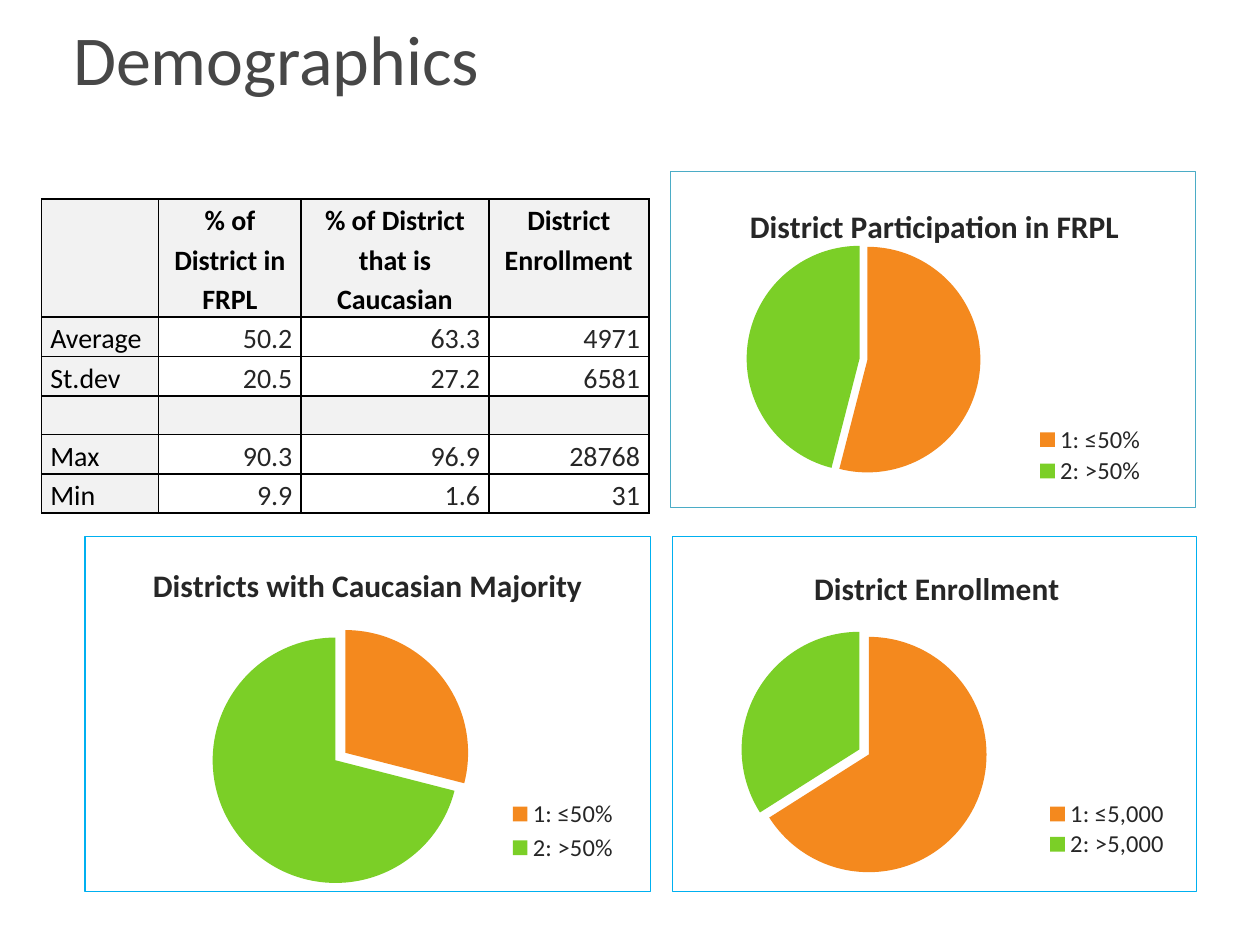
from lxml import etree
from pptx import Presentation
from pptx.chart.data import CategoryChartData
from pptx.dml.color import RGBColor
from pptx.enum.chart import XL_CHART_TYPE, XL_LEGEND_POSITION
from pptx.enum.text import MSO_ANCHOR, PP_ALIGN
from pptx.oxml import parse_xml
from pptx.oxml.ns import nsdecls, qn
from pptx.util import Inches, Pt

PIE = XL_CHART_TYPE.PIE
LEGEND_RIGHT = XL_LEGEND_POSITION.RIGHT
MIDDLE, BOTTOM, TOP = MSO_ANCHOR.MIDDLE, MSO_ANCHOR.BOTTOM, MSO_ANCHOR.TOP
LEFT, CENTER, RIGHT = PP_ALIGN.LEFT, PP_ALIGN.CENTER, PP_ALIGN.RIGHT

FONT = "Calibri"
BLACK, INK, GRAY, SHADE, WHITE = "000000", "262626", "474747", "F2F2F2", "FFFFFF"
SLICES = ["F4891E", "7BCF27"]
GRID_COLUMNS, GRID_ROWS = 100, 75

TABLE_ROWS = [
    ["", "% of District in FRPL", "% of District that is Caucasian", "District Enrollment"],
    ["Average", "50.2", "63.3", "4971"],
    ["St.dev", "20.5", "27.2", "6581"],
    ["", "", "", ""],
    ["Max", "90.3", "96.9", "28768"],
    ["Min", "9.9", "1.6", "31"],
]
COLUMN_SPANS = [9.3, 11.3, 14.9, 12.7]
ROW_SPANS = [9.1, 2.9, 2.9, 1.7, 2.9, 2.9]

CHARTS = [
    dict(box=(53.2, 13.6, 41.7, 26.7), title="District Participation in FRPL",
         categories=["1: ≤50%", "2: >50%"], values=[54, 46], explosion=(13, 0, 7),
         border=("4BACC6", 0.5), title_at=(0.14, 0.08),
         plot_at=(0.13, 0.18, 0.49, 0.76), legend_at=(0.68, 0.75, 0.24, 0.19)),
    dict(box=(53.3, 42.5, 41.7, 28.3), title="District Enrollment",
         categories=["1: ≤5,000", "2: >5,000"], values=[66, 34], explosion=(9, 0, 9),
         border=("00B0F0", 0.75), title_at=(0.26, 0.07),
         plot_at=(0.13, 0.25, 0.49, 0.73), legend_at=(0.7, 0.74, 0.26, 0.17)),
    dict(box=(6.7, 42.5, 45, 28.3), title="Districts with Caucasian Majority",
         categories=["1: ≤50%", "2: >50%"], values=[29, 71], explosion=(10, 0, 10),
         border=("00B0F0", 0.75), title_at=(0.11, 0.06),
         plot_at=(0.22, 0.23, 0.48, 0.76), legend_at=(0.73, 0.73, 0.23, 0.2)),
]


def color(value):
    return RGBColor.from_string(value)


def grid_box(deck, left, top, width, height):
    column, row = deck.slide_width / GRID_COLUMNS, deck.slide_height / GRID_ROWS
    return [int(left * column), int(top * row), int(width * column), int(height * row)]


def write(frame, text, size=16, fill=INK, bold=False, align=LEFT, spacing=None):
    para = frame.paragraphs[0]
    para.alignment = align
    if spacing:
        para.line_spacing = spacing
    span = para.add_run()
    span.text = text
    span.font.name, span.font.size, span.font.bold = FONT, Pt(size), bold
    span.font.color.rgb = color(fill)


def add_title(slide, box, text):
    title = slide.shapes.title
    title.left, title.top, title.width, title.height = box
    title.text_frame.vertical_anchor = MIDDLE
    write(title.text_frame, text, size=40, fill=GRAY)


def add_borders(cell):
    properties = cell._tc.get_or_add_tcPr()
    for index, side in enumerate(["lnL", "lnR", "lnT", "lnB"]):
        properties.insert(index, parse_xml(
            f'<a:{side} {nsdecls("a")} w="12700"><a:solidFill>'
            f'<a:srgbClr val="{BLACK}"/></a:solidFill></a:{side}>'))


def add_statistics(slide, box):
    frame = slide.shapes.add_table(len(TABLE_ROWS), len(COLUMN_SPANS), *box)
    table = frame.table
    for column, share in zip(table.columns, COLUMN_SPANS):
        column.width = int(box[2] * share / sum(COLUMN_SPANS))
    for row, share in zip(table.rows, ROW_SPANS):
        row.height = int(box[3] * share / sum(ROW_SPANS))
    for row_index, texts in enumerate(TABLE_ROWS):
        header = row_index == 0
        for column_index, text in enumerate(texts):
            cell = table.cell(row_index, column_index)
            label = column_index == 0
            cell.margin_left = cell.margin_right = Inches(0.07)
            cell.margin_top = cell.margin_bottom = 0
            cell.vertical_anchor = TOP if header else BOTTOM
            cell.fill.solid()
            shaded = header or label or not text
            cell.fill.fore_color.rgb = color(SHADE if shaded else WHITE)
            add_borders(cell)
            if text:
                write(cell.text_frame, text, bold=header, spacing=1.15,
                      fill=BLACK if header or label else INK,
                      align=CENTER if header else LEFT if label else RIGHT)


def set_layout(element, index, shares, inner=False):
    for old in element.findall(qn("c:layout")):
        element.remove(old)
    layout = etree.Element(qn("c:layout"))
    manual = etree.SubElement(layout, qn("c:manualLayout"))
    settings = [("layoutTarget", "inner")] if inner else []
    settings += [("xMode", "edge"), ("yMode", "edge")]
    settings += zip("xywh", shares)
    for name, value in settings:
        etree.SubElement(manual, qn(f"c:{name}")).set("val", str(value))
    element.insert(index, layout)


def explosion_element(value):
    return parse_xml(f'<c:explosion {nsdecls("c")} val="{value}"/>')


def add_pie(slide, box, title, categories, values, explosion, border,
            title_at, plot_at, legend_at):
    data = CategoryChartData()
    data.categories = categories
    data.add_series("Series 1", values)
    chart = slide.shapes.add_chart(PIE, *box, data).chart
    chart.font.name, chart.font.size = FONT, Pt(10)
    chart.font.color.rgb = color(INK)

    chart.has_title = True
    write(chart.chart_title.text_frame, title, size=18, bold=True, align=CENTER)
    set_layout(chart.chart_title._element, 1, title_at)

    chart.has_legend = True
    legend = chart.legend
    legend.position = LEGEND_RIGHT
    legend.include_in_layout = False
    legend.font.name, legend.font.size = FONT, Pt(14)
    legend.font.color.rgb = color(INK)
    set_layout(legend._element, 1, legend_at)

    plot = chart.plots[0]
    plot.vary_by_categories = True
    set_layout(plot._element.getparent(), 0, plot_at, inner=True)
    series = plot.series[0]
    for index, fill in enumerate(SLICES):
        point_fill = series.points[index].format.fill
        point_fill.solid()
        point_fill.fore_color.rgb = color(fill)
    series_gap, *point_gaps = explosion
    points = series._element.findall(qn("c:dPt"))
    points[0].addprevious(explosion_element(series_gap))
    for point, gap in zip(points, point_gaps):
        point.find(qn("c:spPr")).addprevious(explosion_element(gap))

    line_color, line_width = border
    chart._chartSpace.find(qn("c:chart")).addnext(parse_xml(
        f'<c:spPr {nsdecls("c", "a")}><a:noFill/><a:ln w="{Pt(line_width)}">'
        f'<a:solidFill><a:srgbClr val="{line_color}"/></a:solidFill></a:ln></c:spPr>'))


def main():
    deck = Presentation()
    deck.slide_width, deck.slide_height = Inches(10), Inches(7.5)
    page = deck.slides.add_slide(deck.slide_layouts[5])
    add_title(page, grid_box(deck, 4.8, 0.8, 91.9, 7.5), "Demographics")
    add_statistics(page, grid_box(deck, 3.3, 15.8, sum(COLUMN_SPANS), sum(ROW_SPANS)))
    for settings in CHARTS:
        parts = dict(settings)
        add_pie(page, grid_box(deck, *parts.pop("box")), **parts)
    deck.save("out.pptx")


if __name__ == "__main__":
    main()
